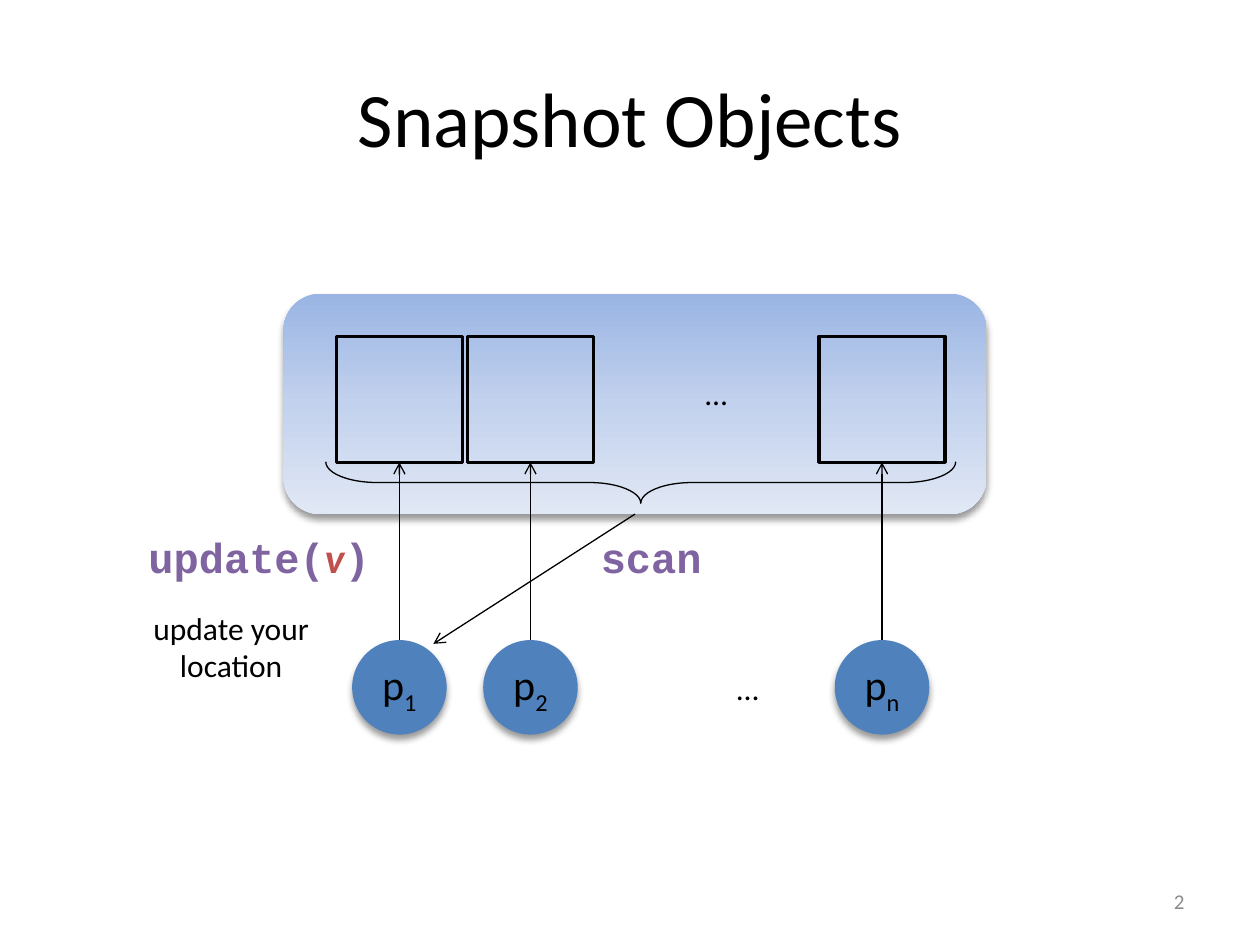
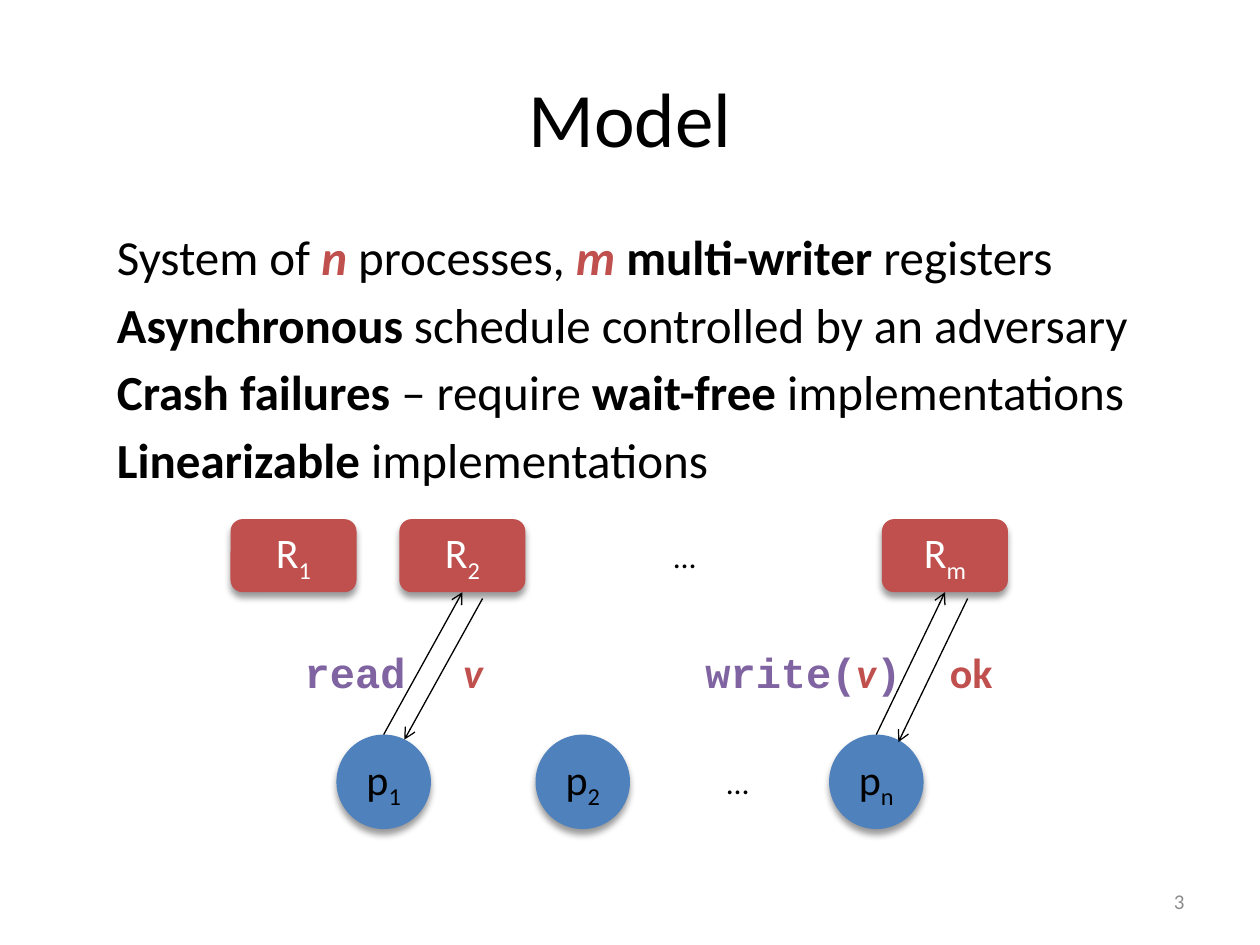
import copy
from dataclasses import dataclass
from typing import Optional, Sequence, Union

import pptx
import pptx.dml.color
import pptx.enum.shapes
import pptx.enum.text
import pptx.oxml
import pptx.oxml.ns
import pptx.util
from pptx.util import Inches

RGBColor = pptx.dml.color.RGBColor
BLACK = RGBColor(0x00, 0x00, 0x00)
WHITE = RGBColor(0xFF, 0xFF, 0xFF)
GRAY = RGBColor(0x8C, 0x8C, 0x8C)
BLUE = RGBColor(0x4F, 0x81, 0xBD)
RED = RGBColor(0xC0, 0x50, 0x4D)
PURPLE = RGBColor(0x80, 0x64, 0xA2)
PANEL_STOPS = (
    (0, RGBColor(0x9A, 0xB5, 0xE4)),
    (0.5, RGBColor(0xC2, 0xD1, 0xED)),
    (1, RGBColor(0xE1, 0xE8, 0xF5)),
)
BODY_FONT = "Calibri"
CODE_FONT = "Courier New"

SHAPE = pptx.enum.shapes.MSO_SHAPE
ALIGN = pptx.enum.text.PP_ALIGN
ANCHOR = pptx.enum.text.MSO_ANCHOR
AUTO_SIZE = pptx.enum.text.MSO_AUTO_SIZE
qn = pptx.oxml.ns.qn

TOP, BOTTOM = 0, 2
CIRCLE_SIZE = 0.75
CELL_SIZE = 1


@dataclass(frozen=True)
class Box:
    left: float
    top: float
    width: float
    height: float

    def lengths(self) -> list:
        return [Inches(n) for n in (self.left, self.top, self.width, self.height)]


@dataclass(frozen=True)
class Run:
    """A piece of text; unset values come from the surrounding text."""
    text: str
    color: Optional[RGBColor] = None
    bold: Optional[bool] = None
    italic: bool = False
    font: Optional[str] = None
    subscript: bool = False


Paragraph = Union[str, Sequence[Run]]

VALUE = Run("v", RED, italic=True, font=BODY_FONT)


def write(shape, *paragraphs: Paragraph, size: float = 18, color: RGBColor = BLACK,
          bold: bool = False, font: str = BODY_FONT, align=ALIGN.LEFT,
          anchor=ANCHOR.TOP, wrap: bool = True, space_before: float = 0) -> None:
    frame = shape.text_frame
    frame.word_wrap = wrap
    frame.vertical_anchor = anchor
    for index, content in enumerate(paragraphs):
        paragraph = frame.add_paragraph() if index else frame.paragraphs[0]
        paragraph.alignment = align
        paragraph.space_before = pptx.util.Pt(space_before)
        for part in [Run(content)] if isinstance(content, str) else content:
            run = paragraph.add_run()
            run.text = part.text
            run.font.name = part.font or font
            run.font.size = pptx.util.Pt(size)
            run.font.bold = bold if part.bold is None else part.bold
            run.font.italic = part.italic
            run.font.color.rgb = part.color or color
            if part.subscript:
                run._r.get_or_add_rPr().set("baseline", "-25000")


def add_text(slide, box: Box, *paragraphs: Paragraph, **text_format):
    shape = slide.shapes.add_textbox(*box.lengths())
    write(shape, *paragraphs, **text_format)
    if not text_format.get("wrap", True):
        shape.text_frame.auto_size = AUTO_SIZE.SHAPE_TO_FIT_TEXT
    return shape


def add_code(slide, box: Box, *runs: Run, wrap: bool = False) -> None:
    add_text(slide, box, runs, size=24, color=PURPLE, bold=True, font=CODE_FONT, wrap=wrap)


def add_ellipsis(slide, left: float, top: float) -> None:
    add_text(slide, Box(left, top, 0.45, 0.4), "…", wrap=False)


def add_shape(slide, kind, box: Box, fill: Optional[RGBColor] = None,
              line_width: float = 0, shadow: bool = False):
    shape = slide.shapes.add_shape(kind, *box.lengths())
    if fill is None:
        shape.fill.background()
    else:
        shape.fill.solid()
        shape.fill.fore_color.rgb = fill
    if line_width:
        shape.line.color.rgb = BLACK
        shape.line.width = pptx.util.Pt(line_width)
    else:
        shape.line.fill.background()
    shape.shadow.inherit = False
    if shadow:
        shape.element.spPr.find(qn("a:effectLst")).append(pptx.oxml.parse_xml(
            f'<a:outerShdw {pptx.oxml.ns.nsdecls("a")} blurRad="{pptx.util.Pt(4)}" '
            f'dist="{pptx.util.Pt(3)}" dir="5400000" rotWithShape="0">'
            '<a:srgbClr val="000000"><a:alpha val="40000"/></a:srgbClr></a:outerShdw>'))
    return shape


def add_labelled(slide, kind, box: Box, letter: str, index: str,
                 fill: RGBColor, color: RGBColor):
    shape = add_shape(slide, kind, box, fill, shadow=True)
    write(shape, [Run(letter), Run(index, subscript=True)], size=24, color=color,
          align=ALIGN.CENTER, anchor=ANCHOR.MIDDLE, wrap=False)
    return shape


def add_process(slide, index: str, left: float, top: float):
    box = Box(left, top, CIRCLE_SIZE, CIRCLE_SIZE)
    return add_labelled(slide, SHAPE.OVAL, box, "p", index, BLUE, BLACK)


def add_register(slide, index: str, left: float):
    box = Box(left, 4.12, 1, 0.58)
    return add_labelled(slide, SHAPE.ROUNDED_RECTANGLE, box, "R", index, RED, WHITE)


def add_arrow(slide, start: Sequence[float] = (0, 0), end: Sequence[float] = (0, 0),
              start_shape=None, start_side: int = TOP, end_shape=None):
    """Draw an arrow; given shapes take the place of the points."""
    arrow = slide.shapes.add_connector(
        pptx.enum.shapes.MSO_CONNECTOR.STRAIGHT, *(Inches(n) for n in (*start, *end)))
    if start_shape is not None:
        arrow.begin_connect(start_shape, start_side)
    if end_shape is not None:
        arrow.end_connect(end_shape, BOTTOM)
    arrow.line.color.rgb = BLACK
    arrow.line.width = pptx.util.Pt(0.75)
    properties = arrow.element.spPr
    line = properties.find(qn("a:ln"))
    line.append(line.makeelement(qn("a:tailEnd"), {"type": "arrow"}))
    properties.append(properties.makeelement(qn("a:effectLst"), {}))


def add_slide(presentation, title: str, number: int):
    slide = presentation.slides.add_slide(presentation.slide_layouts.get_by_name("Title Only"))
    heading = slide.shapes.title
    heading.left, heading.top, heading.width, heading.height = Box(0.5, 0.3, 9, 1.25).lengths()
    write(heading, title, size=44, align=ALIGN.CENTER, anchor=ANCHOR.MIDDLE)
    add_text(slide, Box(7.17, 6.95, 2.33, 0.4), str(number), size=12, color=GRAY,
             align=ALIGN.RIGHT, anchor=ANCHOR.MIDDLE)
    return slide


def add_panel(slide):
    panel = add_shape(slide, SHAPE.ROUNDED_RECTANGLE, Box(2.25, 2.33, 5.58, 1.75),
                      WHITE, shadow=True)
    panel.fill.gradient()
    panel.fill.gradient_angle = 270
    stop_list = panel.element.spPr.find(".//" + qn("a:gsLst"))
    stop_list.append(copy.deepcopy(stop_list[0]))
    for stop, (position, color) in zip(panel.fill.gradient_stops, PANEL_STOPS):
        stop.position = position
        stop.color.rgb = color
    return panel


def build_snapshot_slide(presentation) -> None:
    slide = add_slide(presentation, "Snapshot Objects", 2)
    panel = add_panel(slide)
    for index, center in (("1", 3.17), ("2", 4.21), ("n", 7)):
        process = add_process(slide, index, center - CIRCLE_SIZE / 2, 5.08)
        cell = add_shape(slide, SHAPE.RECTANGLE,
                         Box(center - CELL_SIZE / 2, 2.67, CELL_SIZE, CELL_SIZE), line_width=2)
        add_arrow(slide, start_shape=process, end_shape=cell)
    add_ellipsis(slide, 5.75, 5.26)
    add_ellipsis(slide, 5.5, 2.92)

    brace = add_shape(slide, SHAPE.RIGHT_BRACE, Box(4.92, 1.33, 0.33, 5), line_width=0.75)
    brace.rotation = 90
    brace.adjustments[0] = 1.24
    add_arrow(slide, end=(3.44, 5.11), start_shape=panel, start_side=BOTTOM)

    add_code(slide, Box(1.08, 4.17, 2, 0.5), Run("update("), VALUE, Run(")"), wrap=True)
    add_code(slide, Box(4.67, 4.17, 2, 0.5), Run("scan"), wrap=True)
    add_text(slide, Box(0.92, 4.67, 1.83, 0.92), "update your location",
             align=ALIGN.CENTER, anchor=ANCHOR.MIDDLE)


def build_model_slide(presentation) -> None:
    slide = add_slide(presentation, "Model", 3)
    add_text(
        slide, Box(0.83, 1.75, 8.67, 2.35),
        [Run("System of "), Run("n", RED, bold=True, italic=True), Run(" processes, "),
         Run("m ", RED, bold=True, italic=True), Run("multi-writer", bold=True),
         Run(" registers")],
        [Run("Asynchronous", bold=True), Run(" schedule controlled by an adversary")],
        [Run("Crash failures ", bold=True), Run("– require "), Run("wait-free", bold=True),
         Run(" implementations")],
        [Run("Linearizable ", bold=True), Run("implementations")],
        size=28, space_before=5)

    processes = {index: add_process(slide, index, left, 5.83)
                 for index, left in (("1", 2.67), ("2", 4.25), ("n", 6.58))}
    registers = {index: add_register(slide, index, left)
                 for index, left in (("1", 1.83), ("2", 3.17), ("m", 7))}
    add_ellipsis(slide, 5.25, 4.21)
    add_ellipsis(slide, 5.67, 6.01)

    add_arrow(slide, start_shape=processes["1"], end_shape=registers["2"])
    add_arrow(slide, (3.83, 4.75), (3.21, 5.87))
    add_arrow(slide, start_shape=processes["n"], end_shape=registers["m"])
    add_arrow(slide, (7.68, 4.75), (7.13, 5.89))

    add_code(slide, Box(2.32, 5.08, 1.01, 0.5), Run("read"))
    add_code(slide, Box(3.58, 5.08, 0.36, 0.5), VALUE)
    add_code(slide, Box(5.5, 5.08, 1.77, 0.5), Run("write("), VALUE, Run(")"))
    add_code(slide, Box(7.44, 5.08, 0.54, 0.5), Run("ok", RED, font=BODY_FONT))


def main() -> None:
    presentation = pptx.Presentation()
    presentation.slide_width = Inches(10)
    presentation.slide_height = Inches(7.5)
    build_snapshot_slide(presentation)
    build_model_slide(presentation)
    presentation.save("out.pptx")


if __name__ == "__main__":
    main()
